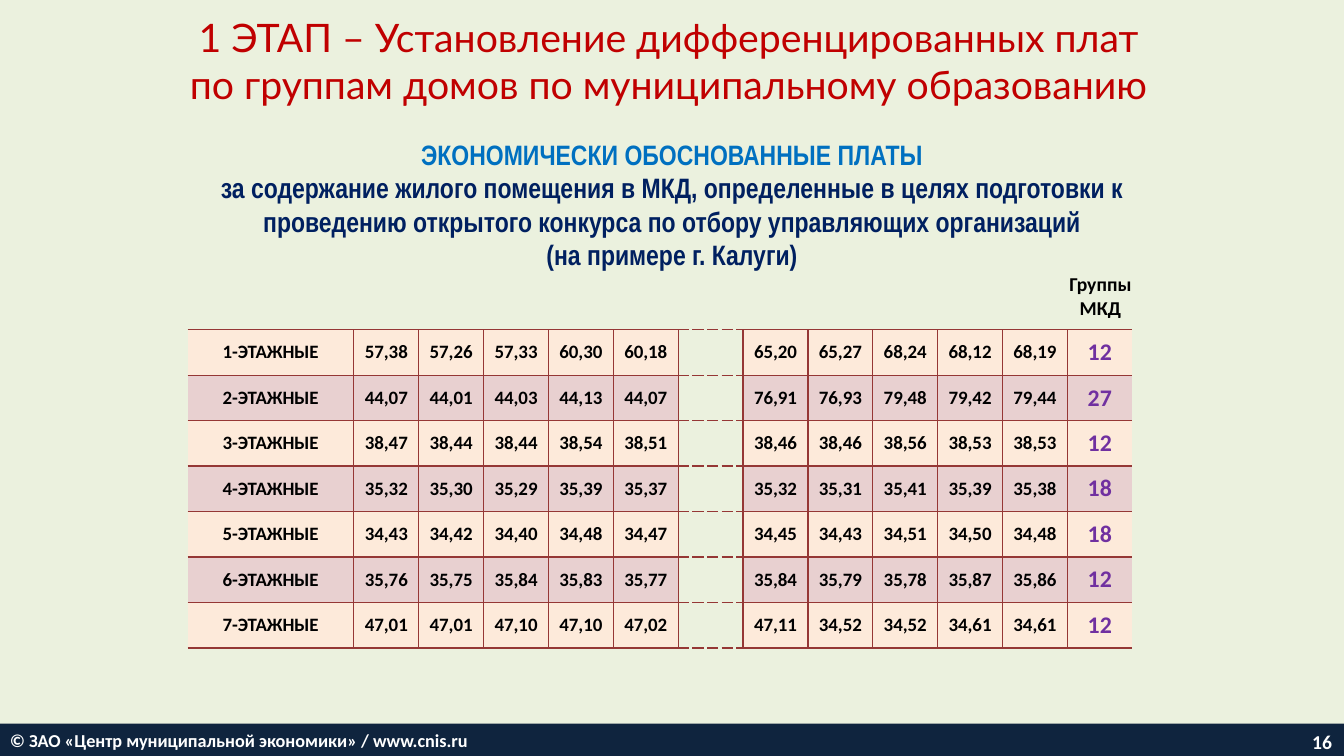
from lxml.etree import SubElement
from pptx import Presentation
from pptx.dml.color import RGBColor
from pptx.enum.shapes import MSO_SHAPE as Shape
from pptx.enum.text import MSO_ANCHOR as Anchor, PP_ALIGN as Align
from pptx.oxml import parse_xml
from pptx.oxml.ns import nsdecls, qn
from pptx.util import Inches, Pt

BACKGROUND = RGBColor(0xEB, 0xF1, 0xDE)
RED = RGBColor(0xC0, 0x00, 0x00)
BLUE = RGBColor(0x00, 0x70, 0xC0)
NAVY = RGBColor(0x00, 0x20, 0x60)
FOOTER = RGBColor(0x0F, 0x24, 0x3E)
BLACK = RGBColor(0x00, 0x00, 0x00)
WHITE = RGBColor(0xFF, 0xFF, 0xFF)
PURPLE = RGBColor(0x70, 0x30, 0xA0)
BORDER = RGBColor(0x95, 0x37, 0x35)
CREAM = RGBColor(0xFD, 0xEA, 0xDA)
ROSE = RGBColor(0xE8, 0xD0, 0xD0)

# One row per building height; the empty column stands for omitted groups
FEES = [
    "57,38 57,26 57,33 60,30 60,18 | 65,20 65,27 68,24 68,12 68,19 12",
    "44,07 44,01 44,03 44,13 44,07 | 76,91 76,93 79,48 79,42 79,44 27",
    "38,47 38,44 38,44 38,54 38,51 | 38,46 38,46 38,56 38,53 38,53 12",
    "35,32 35,30 35,29 35,39 35,37 | 35,32 35,31 35,41 35,39 35,38 18",
    "34,43 34,42 34,40 34,48 34,47 | 34,45 34,43 34,51 34,50 34,48 18",
    "35,76 35,75 35,84 35,83 35,77 | 35,84 35,79 35,78 35,87 35,86 12",
    "47,01 47,01 47,10 47,10 47,02 | 47,11 34,52 34,52 34,61 34,61 12",
]
GAP = "|"


class SlideBuilder:
    font = "Calibri"

    def __init__(self, deck):
        self.page = deck.slides.add_slide(deck.slide_layouts[6])
        fill = self.page.background.fill
        fill.solid()
        fill.fore_color.rgb = BACKGROUND

    def paragraph(self, para, text, size, color, bold=True, font=None,
                  align=Align.CENTER):
        para.text = text
        para.alignment = align
        para.font.size = Pt(size)
        para.font.bold = bold
        para.font.name = font or self.font
        para.font.color.rgb = color

    def text(self, place, lines, size, anchor=Anchor.TOP, **style):
        """Each line is a (text, colour) pair and makes one paragraph."""
        box = self.page.shapes.add_textbox(*map(Inches, place))
        frame = box.text_frame
        frame.word_wrap = True
        frame.vertical_anchor = anchor
        for number, (line, color) in enumerate(lines):
            para = frame.add_paragraph() if number else frame.paragraphs[0]
            self.paragraph(para, line, size, color, **style)

    def bar(self, place, text, size):
        bar = self.page.shapes.add_shape(Shape.RECTANGLE, *map(Inches, place))
        bar.shadow.inherit = False
        bar.fill.solid()
        bar.fill.fore_color.rgb = FOOTER
        bar.line.fill.background()
        bar.text_frame.vertical_anchor = Anchor.MIDDLE
        self.paragraph(bar.text_frame.paragraphs[0], text, size, WHITE,
                       align=Align.LEFT)

    def borders(self, cell, sides):
        """Draw the four sides; a dash of None leaves the side without a line."""
        properties = cell._tc.get_or_add_tcPr()
        for position, (side, dash) in enumerate(sides.items()):
            line = parse_xml(f'<a:ln{side} {nsdecls("a")} w="{Pt(1)}"/>')
            if dash:
                solid = SubElement(line, qn("a:solidFill"))
                SubElement(solid, qn("a:srgbClr"), val=str(BORDER))
                SubElement(line, qn("a:prstDash"), val=dash)
            else:
                SubElement(line, qn("a:noFill"))
            properties.insert(position, line)

    def fee_table(self, place, first_width, rows):
        count = len(rows[0])
        frame = self.page.shapes.add_table(len(rows), count, *map(Inches, place))
        table = frame.table
        table.first_row = table.horz_banding = False
        for index, column in enumerate(table.columns):
            rest = (place[2] - first_width) / (count - 1)
            column.width = Inches(rest if index else first_width)
        for number, row in enumerate(rows):
            for index, value in enumerate(row):
                cell = table.cell(number, index)
                cell.vertical_anchor = Anchor.MIDDLE
                cell.margin_left = cell.margin_right = Inches(0.03)
                last = index == count - 1
                if value == GAP:
                    cell.fill.background()
                else:
                    cell.fill.solid()
                    cell.fill.fore_color.rgb = ROSE if number % 2 else CREAM
                    self.paragraph(cell.text_frame.paragraphs[0], value,
                                   17 if last else 13.5, PURPLE if last else BLACK)
                level = "dash" if value == GAP else "solid"
                self.borders(cell, {"L": "solid" if index else None,
                                    "R": None if last else "solid",
                                    "T": level, "B": level})


def main():
    deck = Presentation()
    deck.slide_width = Inches(13.33)
    deck.slide_height = Inches(7.5)
    slide = SlideBuilder(deck)

    # Subtitle
    slide.text((1.74, 1.31, 9.85, 1.45), [
        ("ЭКОНОМИЧЕСКИ ОБОСНОВАННЫЕ ПЛАТЫ", BLUE),
        ("за содержание жилого помещения в МКД, определенные в целях подготовки "
         "к проведению открытого конкурса по отбору управляющих организаций", NAVY),
        ("(на примере г. Калуги)", NAVY),
    ], 20, font="Arial Narrow")

    # Fees by number of storeys
    rows = [[f"{storeys}-ЭТАЖНЫЕ", *fees.split()]
            for storeys, fees in enumerate(FEES, 1)]
    slide.fee_table((1.86, 3.27, 9.37, 3.16), 1.65, rows)

    # Title and label of the last column
    slide.text((1.63, 0.08, 10, 1.04), [
        ("1 ЭТАП – Установление дифференцированных плат "
         "по группам домов по муниципальному образованию", RED),
    ], 28, anchor=Anchor.MIDDLE, bold=False, font="Lato")
    slide.text((10.41, 2.65, 1.01, 0.57), [("Группы МКД", BLACK)], 14)

    # Footer
    slide.bar((0, 7.18, 13.33, 0.32),
              "© ЗАО «Центр муниципальной экономики» / www.cnis.ru", 13)
    slide.text((10.98, 7.21, 2.33, 0.3), [("16", WHITE)], 14,
               anchor=Anchor.MIDDLE, align=Align.RIGHT)

    deck.save("out.pptx")


if __name__ == "__main__":
    main()
